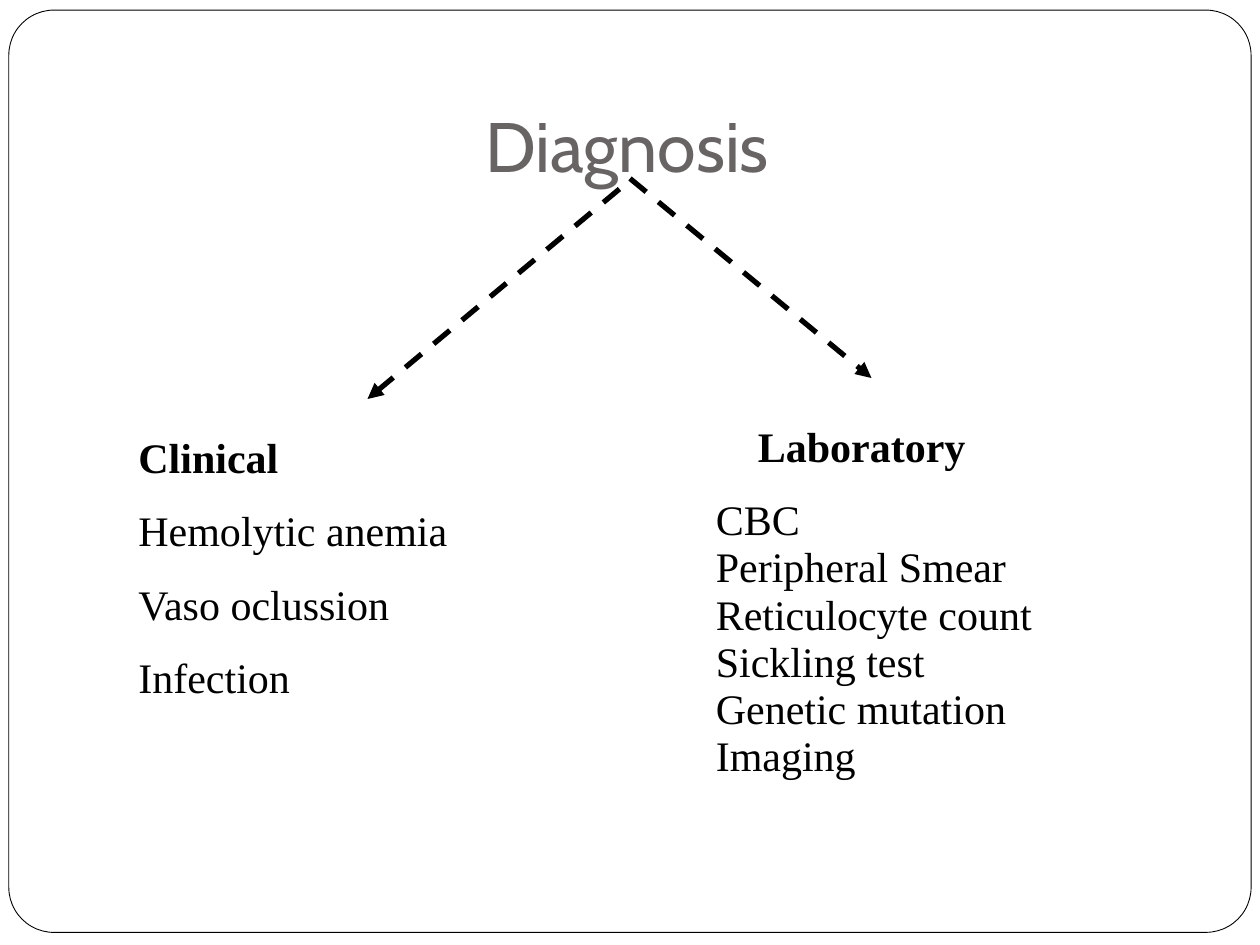
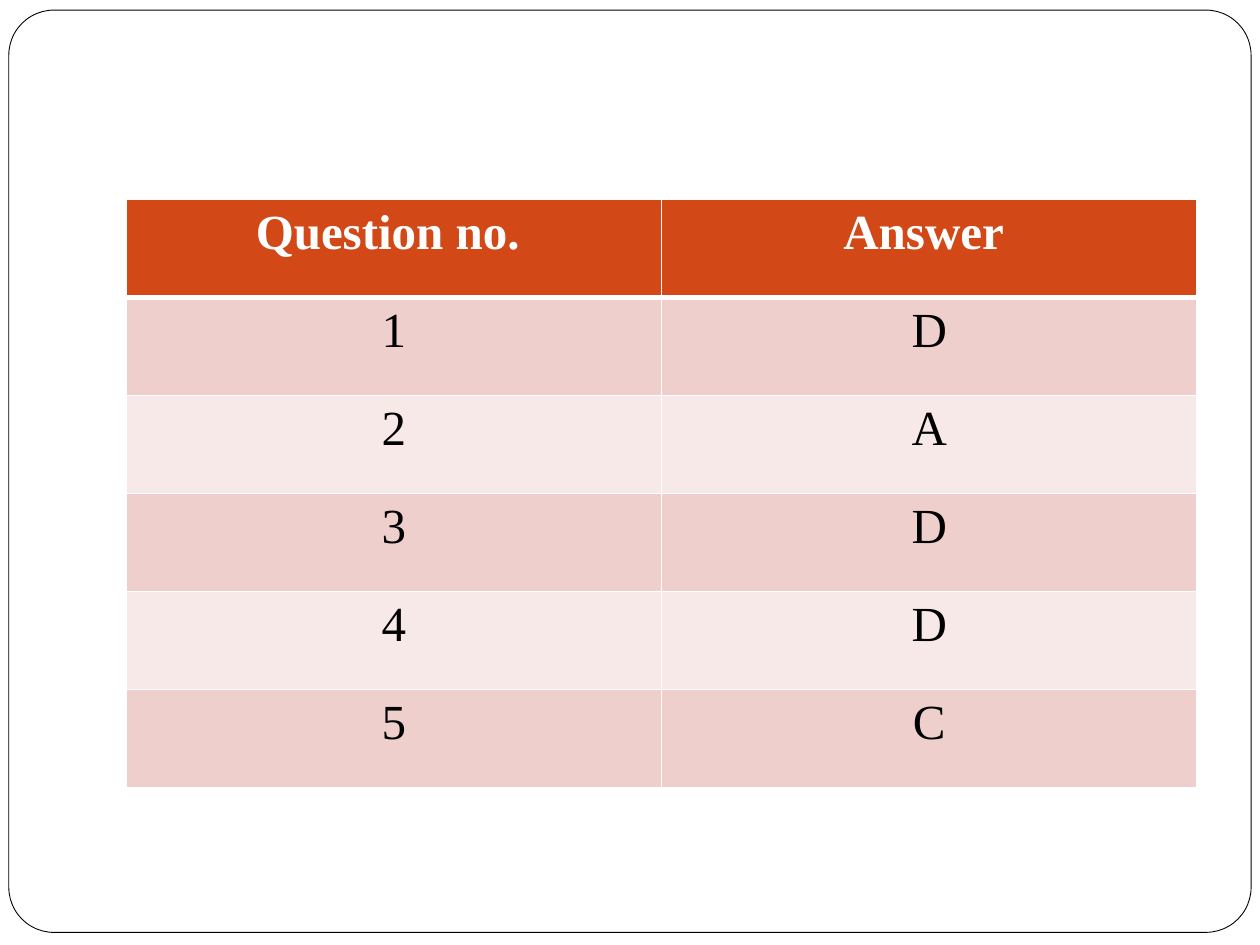
import collections

import pptx
import pptx.dml.color
import pptx.enum.dml
import pptx.enum.shapes
import pptx.enum.text
import pptx.oxml
import pptx.oxml.ns
import pptx.util

COLORS = {
    "paper": "FFFFFF",
    "ink": "000000",
    "title": "696464",
    "header": "D34817",
    "odd_row": "EFCFCC",
    "even_row": "F7E9E8",
}
SERIF = "Times New Roman"
TITLE = {"name": "Cabin", "size": pptx.util.Pt(40)}
BODY = {"name": SERIF, "size": pptx.util.Pt(24), "bold": False}
HEADING = {**BODY, "bold": True}
CELL = {"name": SERIF, "size": pptx.util.Pt(28), "bold": False}
HEADER_CELL = {**CELL, "bold": True}

# The slide is a grid of 120 columns and 90 rows, each 1/12 inch.
COLUMNS, ROWS = 120, 90
UNIT = pptx.util.Inches(1) // 12
Box = collections.namedtuple("Box", "left top width height")

FRAME = Box(0.84, 0.96, 118.32, 87.84)
TITLE_BOX = Box(9, 4, 102, 15)
CLINICAL_BOX = Box(12, 40, 50, 28)
LABORATORY_BOX = Box(71, 39, 38, 6)
TESTS_BOX = Box(67, 48, 47, 28.5)
ANSWERS_BOX = Box(12, 19, 102, 56)
BRANCHES = [((59, 18), (35, 38)), ((60, 17), (83, 36))]

CLINICAL = ["Hemolytic anemia", "Vaso oclussion", "Infection"]
TESTS = ["CBC", "Peripheral Smear", "Reticulocyte count", "Sickling test",
         "Genetic mutation", "Imaging"]
ANSWERS = ["D", "A", "D", "D", "C"]


def grid(*cells):
    """Convert grid counts to slide lengths."""
    return [round(count * UNIT) for count in cells]


def rgb(color):
    return pptx.dml.color.RGBColor.from_string(COLORS[color])


def set_values(target, values):
    for attribute, value in values.items():
        setattr(target, attribute, value)


def set_font(font, style, color):
    set_values(font, style)
    font.color.rgb = rgb(color)


def add_framed_slide(deck):
    slide = deck.slides.add_slide(deck.slide_layouts[6])
    frame = slide.shapes.add_shape(
        pptx.enum.shapes.MSO_SHAPE.ROUNDED_RECTANGLE, *grid(*FRAME))
    frame.adjustments[0] = 0.049
    frame.shadow.inherit = False
    frame.fill.solid()
    frame.fill.fore_color.rgb = rgb("paper")
    frame.line.color.rgb = rgb("ink")
    frame.line.width = pptx.util.Pt(0.5)
    return slide


def add_text(slide, box, lines, color="ink", layout=None, spacing=None):
    """Write (text, font style) lines, with spacing applied from the second on."""
    frame = slide.shapes.add_textbox(*grid(*box)).text_frame
    set_values(frame, {"word_wrap": True, "margin_top": pptx.util.Inches(0.09),
                       **(layout or {})})
    for index, (text, style) in enumerate(lines):
        paragraph = frame.paragraphs[0] if index == 0 else frame.add_paragraph()
        set_values(paragraph, spacing or {})
        if index == 0:
            paragraph.space_before = None
        run = paragraph.add_run()
        run.text = text
        set_font(run.font, style, color)


def add_title(slide, box, text):
    layout = {
        "vertical_anchor": pptx.enum.text.MSO_ANCHOR.BOTTOM,
        "margin_left": pptx.util.Inches(3.1),
        "margin_bottom": pptx.util.Inches(0.1),
    }
    add_text(slide, box, [(text, TITLE)], "title", layout)


def add_branch(slide, start, end):
    branch = slide.shapes.add_connector(
        pptx.enum.shapes.MSO_CONNECTOR.STRAIGHT, *grid(*start, *end))
    branch.line.color.rgb = rgb("ink")
    set_values(branch.line, {"width": pptx.util.Pt(3),
                             "dash_style": pptx.enum.dml.MSO_LINE.DASH})
    arrowhead = pptx.oxml.parse_xml(
        f'<a:tailEnd {pptx.oxml.ns.nsdecls("a")} type="triangle"/>')
    branch.line._get_or_add_ln().append(arrowhead)
    branch._element.spPr.append(pptx.oxml.parse_xml(
        f'<a:effectLst {pptx.oxml.ns.nsdecls("a")}/>'))


def add_cell_borders(cell, widths):
    """Draw white borders with widths in points, keyed by side."""
    properties = cell._tc.get_or_add_tcPr()
    for position, side in enumerate("LRTB"):
        border = pptx.oxml.parse_xml(
            f'<a:ln{side} {pptx.oxml.ns.nsdecls("a")} '
            f'w="{pptx.util.Pt(widths.get(side, 1))}"><a:solidFill>'
            f'<a:srgbClr val="{COLORS["paper"]}"/></a:solidFill></a:ln{side}>')
        properties.insert(position, border)


def add_answer_table(slide, box, answers):
    entries = [("Question no. ", "Answer ")]
    entries += [(str(number), answer) for number, answer in enumerate(answers, 1)]
    table = slide.shapes.add_table(len(entries), 2, *grid(*box)).table
    for row, entry in enumerate(entries):
        if row == 0:
            fill, style, color, widths = "header", HEADER_CELL, "paper", {"B": 3}
        else:
            fill = "odd_row" if row % 2 else "even_row"
            style, color = CELL, "ink"
            widths = {"T": 3} if row == 1 else {}
        for column, text in enumerate(entry):
            cell = table.cell(row, column)
            cell.fill.solid()
            cell.fill.fore_color.rgb = rgb(fill)
            add_cell_borders(cell, widths)
            paragraph = cell.text_frame.paragraphs[0]
            paragraph.alignment = pptx.enum.text.PP_ALIGN.CENTER
            run = paragraph.add_run()
            run.text = text
            set_font(run.font, style, color)


def build_diagnosis(deck):
    slide = add_framed_slide(deck)
    add_title(slide, TITLE_BOX, "Diagnosis")
    for start, end in BRANCHES:
        add_branch(slide, start, end)
    add_text(slide, CLINICAL_BOX,
             [("Clinical", HEADING)] + [(sign, BODY) for sign in CLINICAL],
             spacing={"space_before": pptx.util.Pt(13.2)})
    add_text(slide, LABORATORY_BOX, [("Laboratory", HEADING)])
    add_text(slide, TESTS_BOX, [(test, BODY) for test in TESTS],
             spacing={"line_spacing": 0.5, "space_before": pptx.util.Pt(12.6)})


def build_answers(deck):
    add_answer_table(add_framed_slide(deck), ANSWERS_BOX, ANSWERS)


def main():
    deck = pptx.Presentation()
    set_values(deck, {"slide_width": COLUMNS * UNIT, "slide_height": ROWS * UNIT})
    build_diagnosis(deck)
    build_answers(deck)
    deck.save("out.pptx")


if __name__ == "__main__":
    main()
